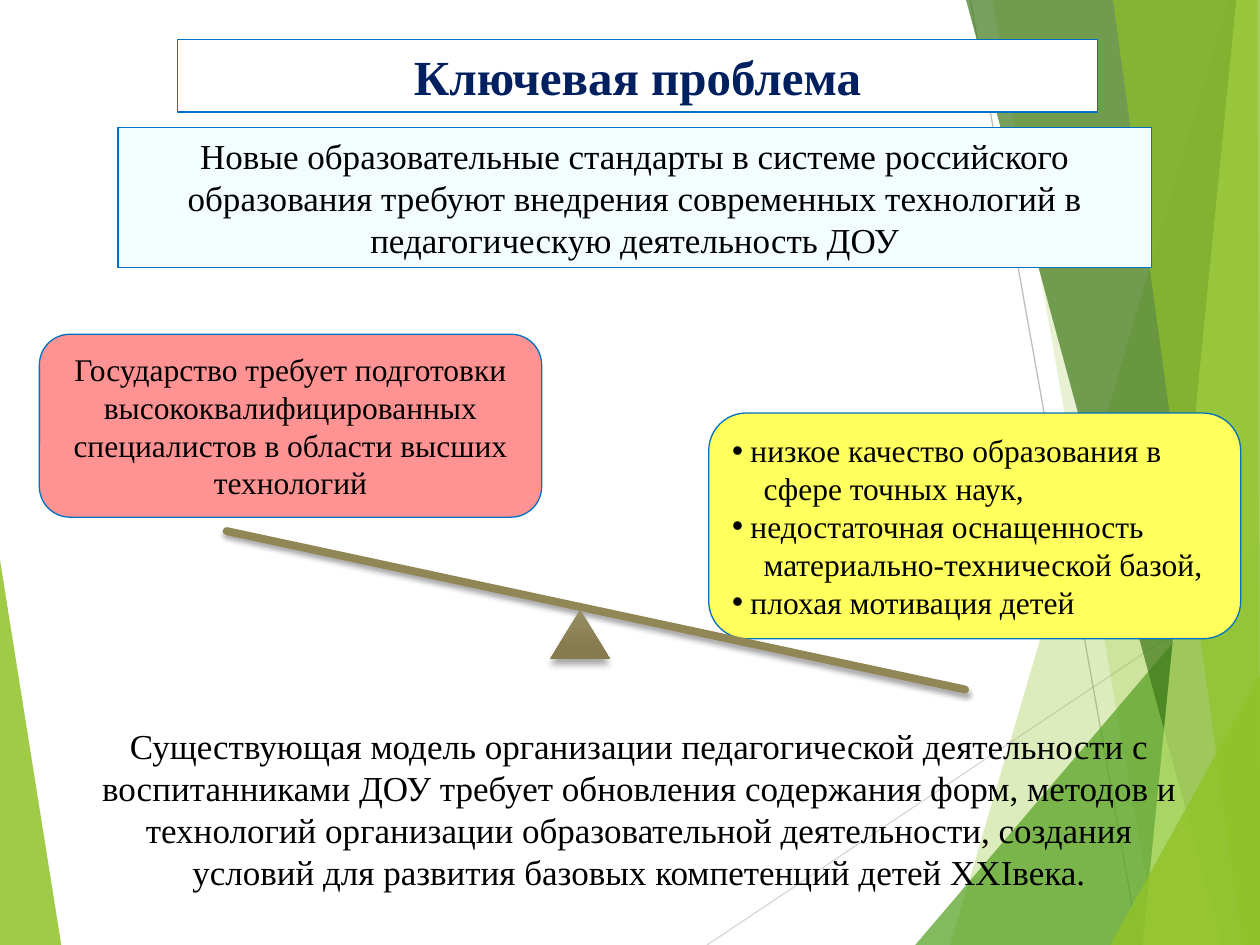
from dataclasses import dataclass
from typing import Optional

from lxml import etree
from pptx import Presentation
from pptx.dml.color import RGBColor
from pptx.enum.shapes import MSO_CONNECTOR, MSO_SHAPE
from pptx.enum.text import MSO_ANCHOR, PP_ALIGN
from pptx.oxml.ns import qn
from pptx.util import Pt

RECT, ROUND = MSO_SHAPE.RECTANGLE, MSO_SHAPE.ROUNDED_RECTANGLE
WEDGE = MSO_SHAPE.ISOSCELES_TRIANGLE
LINE = MSO_CONNECTOR.STRAIGHT
MID, TOP = MSO_ANCHOR.MIDDLE, MSO_ANCHOR.TOP
LEFT, CENTER = PP_ALIGN.LEFT, PP_ALIGN.CENTER
WIDE, HIGH = 720, 540


@dataclass(frozen=True)
class Theme:
    font: str = "Times New Roman"
    head: float = 28
    body: float = 20
    small: float = 18
    ink: str = "000000"
    navy: str = "002060"
    edge: str = "0070C0"
    white: str = "FFFFFF"
    ice: str = "F3FCFF"
    yellow: str = "FFFF5D"
    rose: str = "FF9393"
    beam: str = "918655"
    wedge: tuple = ("988E64", "857B4E")
    lime: str = "90C226"
    green: str = "54A021"
    dark: str = "3F7819"
    pale: str = "C0E474"
    rays: tuple = ("D9D9D9", "BFBFBF")


T = Theme()


@dataclass(frozen=True)
class Facet:
    points: tuple
    color: str
    alpha: int


@dataclass(frozen=True)
class Ray:
    start: tuple
    end: tuple
    color: str
    width: float = 0.75


@dataclass(frozen=True)
class Card:
    area: tuple
    lines: tuple
    size: float
    fill: Optional[str] = None
    kind: int = RECT
    list: bool = False


def rgb(code: str) -> RGBColor:
    return RGBColor.from_string(code)


def draw_facet(shapes, facet: Facet) -> None:
    first, *rest = [(Pt(x), Pt(y)) for x, y in facet.points]
    pen = shapes.build_freeform(*first)
    pen.add_line_segments(rest, close=True)
    shape = pen.convert_to_shape()
    shape.shadow.inherit = False
    shape.line.fill.background()
    shape.fill.solid()
    shape.fill.fore_color.rgb = rgb(facet.color)
    tone = shape.element.spPr.find(".//" + qn("a:srgbClr"))
    etree.SubElement(tone, qn("a:alpha"), val=str(facet.alpha * 1000))


def draw_ray(shapes, ray: Ray):
    line = shapes.add_connector(LINE, *map(Pt, ray.start + ray.end))
    line.line.color.rgb = rgb(ray.color)
    line.line.width = Pt(ray.width)
    etree.SubElement(line.element.spPr, qn("a:effectLst"))
    return line


def cast_shade(shape, blur: float, drop: float) -> None:
    box = shape.element.spPr.find(qn("a:effectLst"))
    shade = etree.SubElement(box, qn("a:outerShdw"), blurRad=str(Pt(blur)),
                             dist=str(Pt(drop)), dir="5400000", rotWithShape="0")
    tone = etree.SubElement(shade, qn("a:srgbClr"), val=T.ink)
    etree.SubElement(tone, qn("a:alpha"), val="35000")


def paint(shape, color: str) -> None:
    shape.fill.solid()
    shape.fill.fore_color.rgb = rgb(color)
    shape.line.color.rgb = rgb(T.edge)
    shape.line.width = Pt(0.75)


def add_run(para, text: str, size: float, color: str = T.ink, bold: bool = False) -> None:
    run = para.add_run()
    run.text = text
    run.font.name, run.font.size, run.font.bold = T.font, Pt(size), bold
    run.font.color.rgb = rgb(color)


def indent(para, mark: bool) -> None:
    props = para._p.get_or_add_pPr()
    props.set("marL", str(Pt(10.5 if mark else 18)))
    props.set("indent", str(Pt(-10.5 if mark else 0)))
    if mark:
        etree.SubElement(props, qn("a:buFont"), typeface="Arial")
        etree.SubElement(props, qn("a:buChar"), char="•")


def draw_card(shapes, card: Card) -> None:
    area = map(Pt, card.area)
    if card.fill:
        shape = shapes.add_shape(card.kind, *area)
        shape.shadow.inherit = False
        paint(shape, card.fill)
    else:
        shape = shapes.add_textbox(*area)
    frame = shape.text_frame
    frame.word_wrap = True
    frame.vertical_anchor = MID if card.fill else TOP
    for i, text in enumerate(card.lines):
        para = frame.add_paragraph() if i else frame.paragraphs[0]
        para.alignment = LEFT if card.list else CENTER
        if card.list:
            indent(para, mark=i % 2 == 0)
        add_run(para, text, card.size)


FACETS = (
    Facet(((702, 0), (543, HIGH), (WIDE, HIGH), (WIDE, 0)), T.lime, 30),
    Facet(((567, 0), (661.5, HIGH), (WIDE, HIGH), (WIDE, 0)), T.lime, 20),
    Facet(((523, HIGH), (WIDE, 309), (WIDE, HIGH)), T.green, 72),
    Facet(((552, 0), (698.5, HIGH), (WIDE, HIGH), (WIDE, 0)), T.dark, 70),
    Facet(((706.5, 0), (653, HIGH), (WIDE, HIGH), (WIDE, 0)), T.pale, 70),
    Facet(((636, 0), (710, HIGH), (WIDE, HIGH), (718.5, 0)), T.lime, 65),
    Facet(((634.5, HIGH), (WIDE, 385.5), (WIDE, HIGH)), T.lime, 80),
)
SIDE = Facet(((0, 320), (35, HIGH), (0, HIGH)), T.lime, 85)
RAYS = (Ray((404, HIGH), (WIDE, 329), T.rays[0]),
        Ray((554.5, 0), (651, HIGH), T.rays[1]))
BEAM = Ray((129.5, 303.5), (551.5, 394), T.beam, 4.5)

CARDS = (
    Card((67.5, 73, 590.5, 80), (
        "Новые образовательные стандарты в системе российского образования требуют "
        "внедрения современных технологий в педагогическую деятельность ДОУ",),
        T.body, T.ice),
    Card((405, 236, 304, 129), (
        "низкое качество образования в", "сфере точных наук,",
        "недостаточная оснащенность", "материально-технической базой,",
        "плохая мотивация детей"), T.small, T.yellow, ROUND, True),
    Card((22.5, 191, 287, 104.5), (
        "Государство требует подготовки высококвалифицированных специалистов "
        "в области высших технологий",), T.small, T.rose, ROUND),
)
CLOSE = Card((44.5, 410.5, 641.5, 104.5), (
    "Существующая модель организации педагогической деятельности с воспитанниками "
    "ДОУ требует обновления содержания форм, методов и технологий организации "
    "образовательной деятельности, создания условий для развития базовых "
    "компетенций детей XXIвека.",), T.body)


def main() -> None:
    deck = Presentation()
    deck.slide_width, deck.slide_height = Pt(WIDE), Pt(HIGH)
    slide = deck.slides.add_slide(deck.slide_layouts[5])
    shapes = slide.shapes

    # Backdrop of facets and thin rays
    draw_facet(shapes, SIDE)
    for ray in RAYS:
        draw_ray(shapes, ray)
    for facet in FACETS:
        draw_facet(shapes, facet)

    # Title, raised above the backdrop
    title = shapes.title
    title.element.getparent().append(title.element)
    title.left, title.top, title.width, title.height = map(Pt, (101.5, 22.5, 525.5, 41.5))
    paint(title, T.white)
    title.text_frame.vertical_anchor = MID
    para = title.text_frame.paragraphs[0]
    para.alignment = CENTER
    add_run(para, "Ключевая проблема", T.head, T.navy, True)

    # Text cards
    for card in CARDS:
        draw_card(shapes, card)

    # Seesaw: beam and wedge
    beam = draw_ray(shapes, BEAM)
    beam.line._get_or_add_ln().set("cap", "rnd")
    cast_shade(beam, 3, 2)
    wedge = shapes.add_shape(WEDGE, *map(Pt, (314.5, 348.5, 34, 28)))
    wedge.shadow.inherit = False
    wedge.line.fill.background()
    wedge.fill.gradient()
    wedge.fill.gradient_angle = 270
    for stop, color, place in zip(wedge.fill.gradient_stops, T.wedge, (0, 0.78)):
        stop.color.rgb = rgb(color)
        stop.position = place
    cast_shade(wedge, 4, 3)

    # Closing statement
    draw_card(shapes, CLOSE)
    deck.save("out.pptx")


if __name__ == "__main__":
    main()
